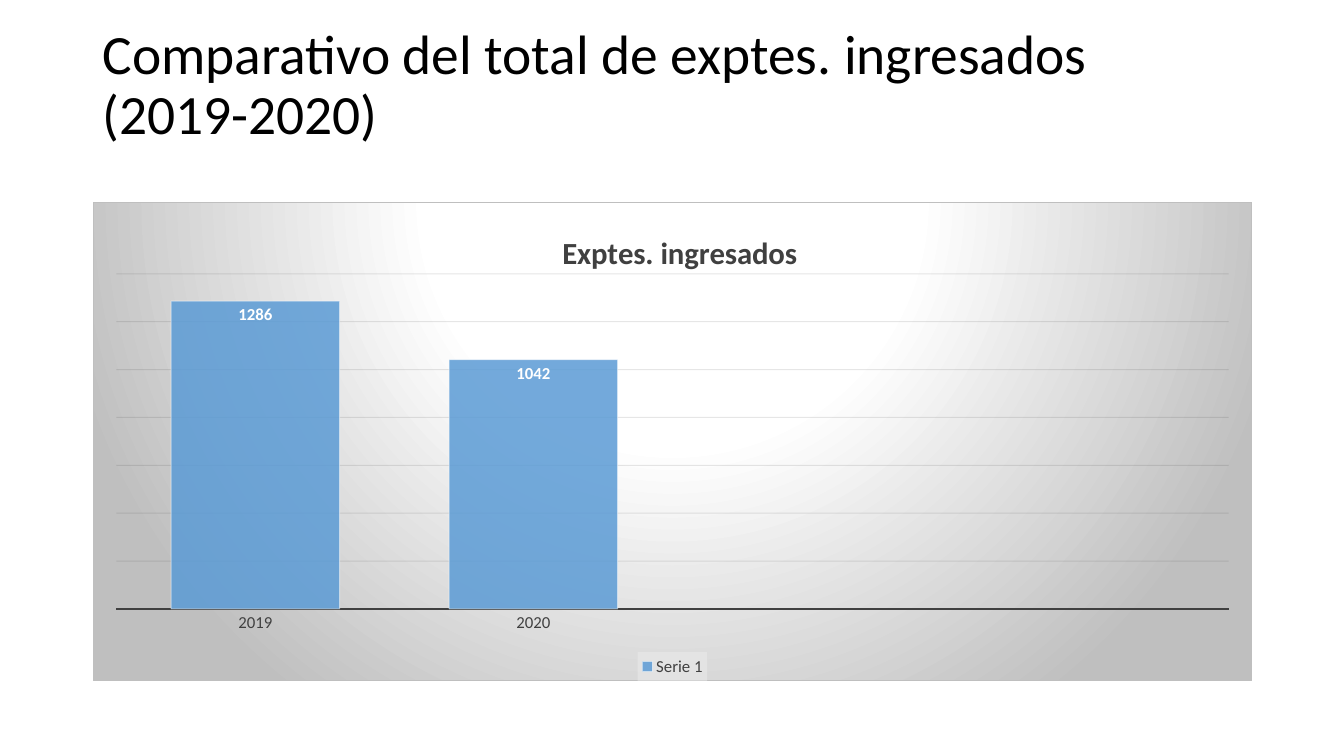
from lxml import etree
from pptx import Presentation
from pptx import util as u
from pptx.chart.data import CategoryChartData
from pptx.dml.color import RGBColor
from pptx.enum import chart as ec, text
from pptx.oxml import parse_xml
from pptx.oxml.ns import qn

NS = ('xmlns:c="http://schemas.openxmlformats.org/drawingml/2006/chart" '
      'xmlns:a="http://schemas.openxmlformats.org/drawingml/2006/main"')


def hue(code):
    return RGBColor.from_string(code)


class Deck:
    """Holds the style and the current slide; lengths are shares of its size."""

    face, ink, bar = "Calibri", "404040", "5B9BD5"

    def __init__(self):
        self.prs = Presentation()
        self.prs.slide_width, self.prs.slide_height = u.Inches(13.33), u.Inches(7.5)
        self.slide = self.prs.slides.add_slide(self.prs.slide_layouts[6])

    def box(self, x, y, w, h):
        wide, high = self.prs.slide_width, self.prs.slide_height
        return int(x * wide), int(y * high), int(w * wide), int(h * high)

    def font(self, font, size, code, bold=False):
        font.name, font.size, font.bold = self.face, u.Pt(size), bold
        font.color.rgb = hue(code)

    def line(self, line, code, width):
        line.color.rgb, line.width = hue(code), u.Pt(width)

    def head(self, words, area):
        frame = self.slide.shapes.add_textbox(*self.box(*area)).text_frame
        frame.word_wrap = True
        frame.vertical_anchor = text.MSO_ANCHOR.MIDDLE
        para = frame.paragraphs[0]
        para.text, para.line_spacing = words, 0.9
        self.font(para.font, 39.6, "000000")

    def fade(self, root, route, share):
        for color in root.xpath(route + "//a:srgbClr"):
            etree.SubElement(color, qn("a:alpha")).set("val", str(share * 1000))

    def place(self, node, index, **spots):
        for old in node.findall(qn("c:layout")):
            node.remove(old)
        modes = '<c:layoutTarget val="inner"/>' if index == 0 else ""
        modes += '<c:xMode val="edge"/><c:yMode val="edge"/>'
        sizes = "".join(f'<c:{k} val="{v}"/>' for k, v in spots.items())
        node.insert(index, parse_xml(
            f"<c:layout {NS}><c:manualLayout>{modes}{sizes}</c:manualLayout></c:layout>"))

    def back(self, root):
        stops = "".join(f'<a:gs pos="{pos}000"><a:srgbClr val="{code}"/></a:gs>'
                        for pos, code in ((0, "FFFFFF"), (39, "FFFFFF"), (100, "BFBFBF")))
        root.find(qn("c:chart")).addnext(parse_xml(
            f'<c:spPr {NS}><a:gradFill><a:gsLst>{stops}</a:gsLst><a:path path="circle">'
            '<a:fillToRect l="50000" t="-80000" r="50000" b="180000"/></a:path></a:gradFill>'
            '<a:ln w="9525"><a:solidFill><a:srgbClr val="BFBFBF"/></a:solidFill></a:ln></c:spPr>'))

    def bars(self, title, cats, name, vals, area):
        data = CategoryChartData()
        data.categories = cats
        data.add_series(name, vals)
        chart = self.slide.shapes.add_chart(
            ec.XL_CHART_TYPE.COLUMN_CLUSTERED, *self.box(*area), data).chart
        root = chart.element
        self.font(chart.font, 10, "000000")
        self.back(root)

        chart.has_title = True
        para = chart.chart_title.text_frame.paragraphs[0]
        para.text = title
        self.font(para.font, 22, self.ink, True)
        self.place(root.xpath(".//c:chart/c:title")[0], 1, x=0.4, y=0.05)
        self.place(root.xpath(".//c:plotArea")[0], 0, x=0.02, y=0.15, w=0.96, h=0.7)

        axis = chart.category_axis
        axis.major_tick_mark = ec.XL_TICK_MARK.NONE
        self.font(axis.tick_labels.font, 12, self.ink)
        self.line(axis.format.line, self.ink, 1.5)
        scale = chart.value_axis
        scale.minimum_scale, scale.maximum_scale, scale.major_unit = 0, 1400, 200
        scale.visible = False
        self.line(scale.major_gridlines.format.line, "0D0D0D", 0.75)
        self.fade(root, ".//c:majorGridlines", 10)

        plot = chart.plots[0]
        plot.gap_width, plot.vary_by_categories = 65, False
        series = plot.series[0]
        series.format.fill.solid()
        series.format.fill.fore_color.rgb = hue(self.bar)
        self.line(series.format.line, "FFFFFF", 0.75)
        self.fade(root, ".//c:ser/c:spPr/a:solidFill", 85)
        self.fade(root, ".//c:ser/c:spPr/a:ln", 50)
        labels = series.data_labels
        labels.show_value = True
        labels.position = ec.XL_LABEL_POSITION.INSIDE_END
        self.font(labels.font, 12, "FFFFFF", True)

        chart.has_legend = True
        chart.legend.position = ec.XL_LEGEND_POSITION.BOTTOM
        chart.legend.include_in_layout = False
        self.font(chart.legend.font, 12, self.ink)
        key = root.xpath(".//c:legend")[0]
        self.place(key, 1, x=0.47, y=0.94, w=0.06, h=0.06)
        key.find(qn("c:overlay")).addnext(parse_xml(
            f'<c:spPr {NS}><a:solidFill><a:srgbClr val="F2F2F2"/></a:solidFill></c:spPr>'))
        self.fade(key, "./c:spPr", 40)


def main():
    deck = Deck()
    left, width = 0.92 / 13.33, 11.5 / 13.33
    deck.head("Comparativo del total de exptes. ingresados (2019-2020)",
              (left, 0.21 / 7.5, width, 1.3 / 7.5))
    deck.bars("Exptes. ingresados", ("2019", "2020", "", ""), "Serie 1",
              (1286, 1042, None, None), (left, 2 / 7.5, width, 4.76 / 7.5))
    deck.prs.save("out.pptx")


if __name__ == "__main__":
    main()
